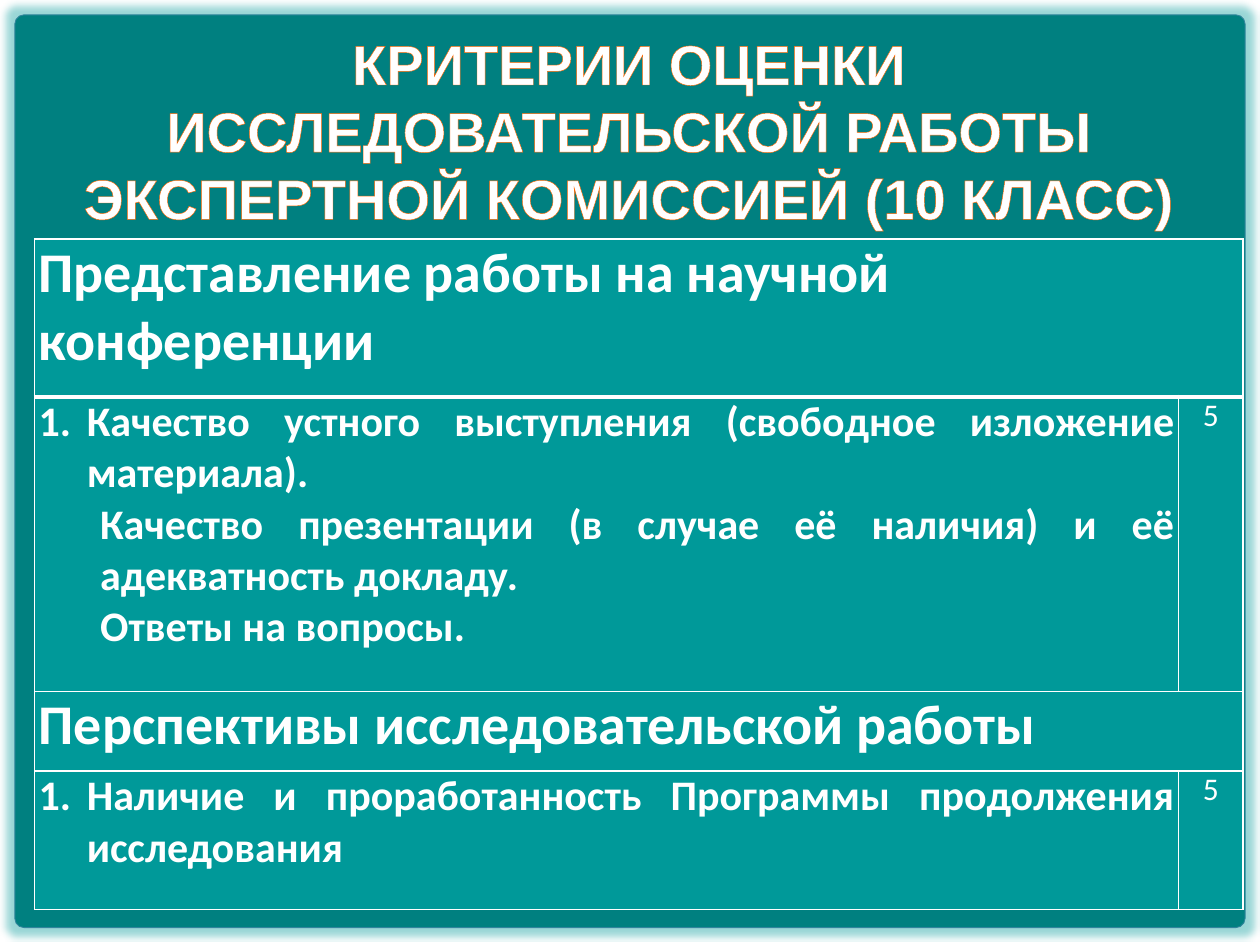
from lxml import etree
from pptx import Presentation
from pptx import util as u
from pptx.dml.color import RGBColor
from pptx.enum import shapes, text
from pptx.oxml import parse_xml
from pptx.oxml.ns import nsdecls, qn

TITLE = "КРИТЕРИИ ОЦЕНКИ ИССЛЕДОВАТЕЛЬСКОЙ РАБОТЫ ЭКСПЕРТНОЙ КОМИССИЕЙ (10 КЛАСС)"
SECTIONS = [
    {
        "heading": "Представление работы на научной конференции",
        "criteria": [
            ("Качество устного выступления (свободное изложение материала).", "numbered"),
            ("Качество презентации (в случае её наличия) и её адекватность докладу.", "block"),
            ("Ответы на вопросы.", "first_line"),
        ],
        "score": "5",
        "heights": (3.18, 5.94),
        "rule": 3,
    },
    {
        "heading": "Перспективы исследовательской работы",
        "criteria": [
            ("Наличие и проработанность Программы продолжения исследования", "numbered"),
        ],
        "score": "5",
        "heights": (1.6, 2.79),
        "rule": 1,
    },
]
INDENTS = {"numbered": (0.97, -0.97), "block": (1.24, 0), "first_line": (0, 1.24)}
COLUMNS = (23.06, 1.3)
THEME = {
    "panel": "008080", "edge": "31859C", "glow": "009999", "cell": "009999",
    "ink": "FFFFFF", "outline": "FF6600", "border": "FFFFFF",
    "title_font": "Arial", "table_font": "Calibri",
    "title": 32, "heading": 32, "criterion": 24, "score": 18,
}


def format_runs(paragraph, size, font, bold=True):
    for run in paragraph.runs:
        run.font.size = u.Pt(size)
        run.font.name = font
        run.font.bold = bold
        run.font.color.rgb = RGBColor.from_string(THEME["ink"])


def line_xml(tag, width, color):
    return parse_xml(
        f'<a:{tag} {nsdecls("a")} w="{int(u.Pt(width))}"><a:solidFill>'
        f'<a:srgbClr val="{color}"/></a:solidFill></a:{tag}>')


def indent(paragraph, kind):
    left, first = INDENTS[kind]
    properties = paragraph._p.get_or_add_pPr()
    properties.set("marL", str(int(u.Cm(left))))
    properties.set("indent", str(int(u.Cm(first))))
    if kind == "numbered":
        etree.SubElement(properties, qn("a:buFont")).set("typeface", "+mj-lt")
        etree.SubElement(properties, qn("a:buAutoNum")).set("type", "arabicPeriod")


def style_cell(cell, top, bottom):
    cell.margin_left = cell.margin_right = u.Cm(0.08)
    cell.margin_top = cell.margin_bottom = 0
    cell.fill.solid()
    cell.fill.fore_color.rgb = RGBColor.from_string(THEME["cell"])
    widths = {"lnL": 1, "lnR": 1, "lnT": top, "lnB": bottom}
    for place, (side, width) in enumerate(widths.items()):
        cell._tc.get_or_add_tcPr().insert(place, line_xml(side, width, THEME["border"]))


def fill_cell(cell, lines, size, align, bold=True):
    cell.text_frame.text = "\n".join(line for line, _ in lines)
    for paragraph, (_, kind) in zip(cell.text_frame.paragraphs, lines):
        paragraph.alignment = align
        format_runs(paragraph, size, THEME["table_font"], bold)
        if kind:
            indent(paragraph, kind)


def add_panel(slide):
    panel = slide.shapes.add_shape(
        shapes.MSO_SHAPE.ROUNDED_RECTANGLE, u.Cm(0.3), u.Cm(0.3), u.Cm(24.8), u.Cm(18.4))
    panel.adjustments[0] = 0.01
    panel.shadow.inherit = False
    panel.fill.solid()
    panel.fill.fore_color.rgb = RGBColor.from_string(THEME["panel"])
    panel.line.color.rgb = RGBColor.from_string(THEME["edge"])
    panel.line.width = u.Pt(0.5)
    effects = panel._element.spPr.find(qn("a:effectLst"))
    effects.append(parse_xml(
        f'<a:glow {nsdecls("a")} rad="{int(u.Pt(8))}"><a:srgbClr val="{THEME["glow"]}">'
        '<a:alpha val="40000"/></a:srgbClr></a:glow>'))


def add_title(slide):
    title = slide.shapes.add_textbox(u.Cm(0.3), u.Cm(0.46), u.Cm(24.77), u.Cm(4.37))
    title.text_frame.word_wrap = True
    title.text_frame.text = TITLE
    paragraph = title.text_frame.paragraphs[0]
    paragraph.alignment = text.PP_ALIGN.CENTER
    format_runs(paragraph, THEME["title"], THEME["title_font"])
    for run in paragraph.runs:
        run.font._element.insert(0, line_xml("ln", 0.25, THEME["outline"]))


def add_criteria(slide):
    heights = [height for section in SECTIONS for height in section["heights"]]
    table = slide.shapes.add_table(
        len(heights), len(COLUMNS), u.Cm(0.7), u.Cm(4.82),
        u.Cm(sum(COLUMNS)), u.Cm(sum(heights))).table
    for column, width in zip(table.columns, COLUMNS):
        column.width = u.Cm(width)
    for row, height in zip(table.rows, heights):
        row.height = u.Cm(height)
    for number, section in enumerate(SECTIONS):
        top = 2 * number
        for column in range(len(COLUMNS)):
            style_cell(table.cell(top, column), 1, section["rule"])
            style_cell(table.cell(top + 1, column), section["rule"], 1)
        heading = table.cell(top, 0)
        heading.merge(table.cell(top, 1))
        fill_cell(heading, [(section["heading"], None)], THEME["heading"], text.PP_ALIGN.LEFT)
        fill_cell(table.cell(top + 1, 0), section["criteria"], THEME["criterion"],
                  text.PP_ALIGN.JUSTIFY)
        fill_cell(table.cell(top + 1, 1), [(section["score"], None)], THEME["score"],
                  text.PP_ALIGN.CENTER, bold=False)


def main():
    deck = Presentation()
    deck.slide_width, deck.slide_height = u.Cm(25.4), u.Cm(19.05)
    slide = deck.slides.add_slide(deck.slide_layouts[6])
    add_panel(slide)
    add_title(slide)
    add_criteria(slide)
    deck.save("out.pptx")


if __name__ == "__main__":
    main()
